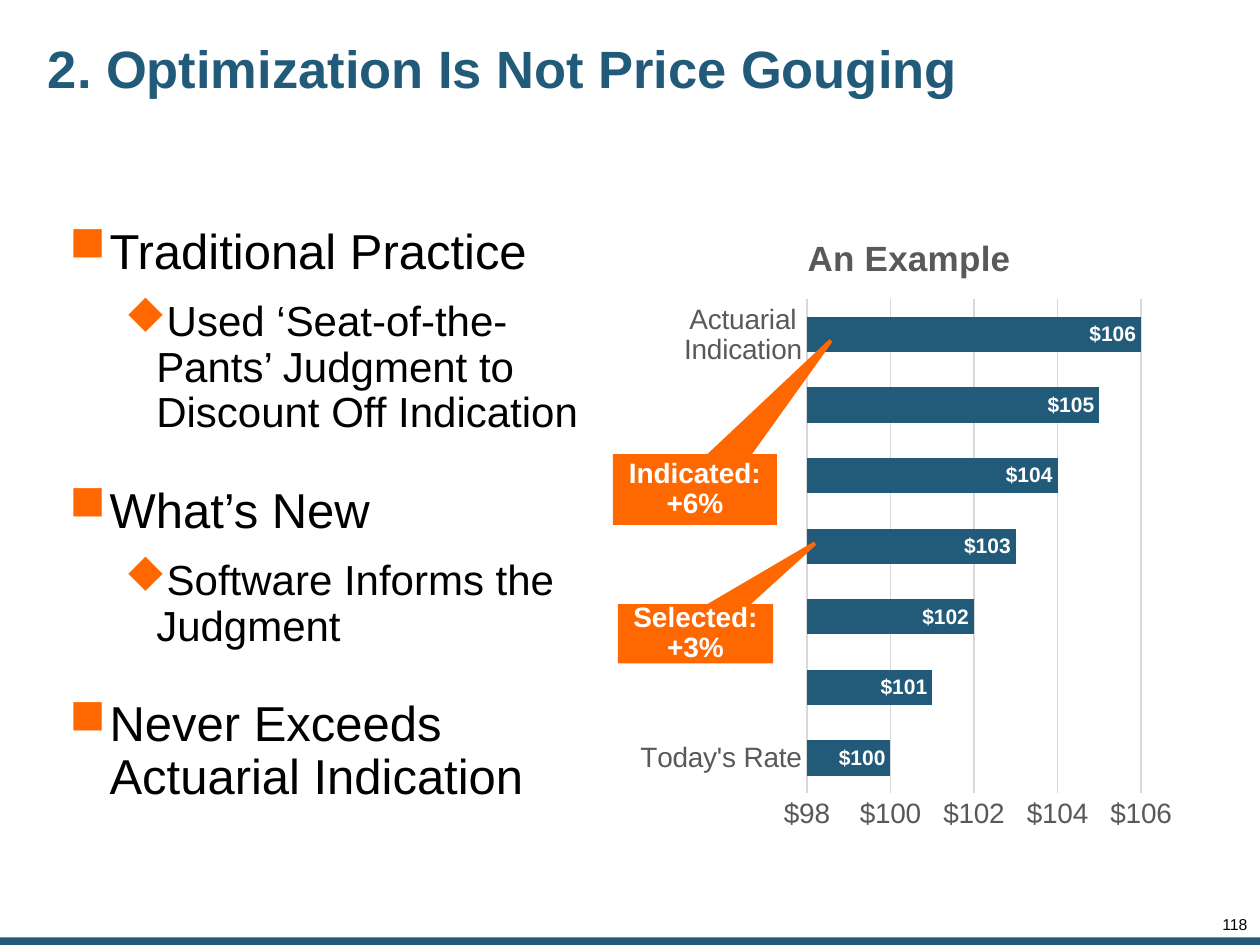
from lxml import etree
from pptx import Presentation
from pptx.chart.data import CategoryChartData
from pptx.dml.color import RGBColor
from pptx.enum.chart import XL_CHART_TYPE, XL_LABEL_POSITION, XL_TICK_MARK
from pptx.enum.shapes import MSO_SHAPE
from pptx.enum.text import MSO_ANCHOR, PP_ALIGN
from pptx.oxml import parse_xml
from pptx.oxml.ns import nsdecls, qn
from pptx.util import Inches, Pt

BLUE = RGBColor(0x22, 0x5A, 0x7A)
ORANGE = RGBColor(0xFF, 0x68, 0x01)
BLACK = RGBColor(0, 0, 0)
WHITE = RGBColor(0xFF, 0xFF, 0xFF)
GRAY = RGBColor(0x59, 0x59, 0x59)
LIGHT_GRAY = RGBColor(0xD9, 0xD9, 0xD9)
BAR_CLUSTERED = XL_CHART_TYPE.BAR_CLUSTERED
INSIDE_END = XL_LABEL_POSITION.INSIDE_END
NO_TICKS = XL_TICK_MARK.NONE
RECTANGLE = MSO_SHAPE.RECTANGLE
CALLOUT = MSO_SHAPE.RECTANGULAR_CALLOUT
TOP, MIDDLE = MSO_ANCHOR.TOP, MSO_ANCHOR.MIDDLE
LEFT, CENTER, RIGHT = PP_ALIGN.LEFT, PP_ALIGN.CENTER, PP_ALIGN.RIGHT
DOLLARS = '"$"#,##0'


def style_font(font, size, color, bold=False):
    font.name = "Arial"
    font.size = Pt(size)
    font.bold = bold
    font.color.rgb = color


def prepare_frame(frame, inset, anchor):
    frame.word_wrap = True
    frame.vertical_anchor = anchor
    frame.margin_left = frame.margin_right = Inches(inset)
    frame.margin_top = frame.margin_bottom = Inches(inset)


deck = Presentation()
deck.slide_width, deck.slide_height = Inches(10), Inches(7.5)
slide = deck.slides.add_slide(deck.slide_layouts[5])

footer_bar = slide.shapes.add_shape(
    RECTANGLE, Inches(0), Inches(7.44), Inches(10), Inches(0.06))
footer_bar.shadow.inherit = False
footer_bar.fill.solid()
footer_bar.fill.fore_color.rgb = BLUE
footer_bar.line.fill.background()

title = slide.shapes.title
title.left, title.top = Inches(0.33), Inches(0.1)
title.width, title.height = Inches(8.09), Inches(0.94)
title.text_frame.text = "2. Optimization Is Not Price Gouging"
prepare_frame(title.text_frame, 0.05, MIDDLE)
para = title.text_frame.paragraphs[0]
para.alignment = LEFT
para.line_spacing = 0.9
style_font(para.font, 30, BLUE, True)

# Bulleted points: level and text
points = [
    (0, "Traditional Practice"),
    (1, "Used ‘Seat-of-the-Pants’ Judgment to Discount Off Indication"),
    (0, "What’s New"),
    (1, "Software Informs the Judgment"),
    (0, "Never Exceeds Actuarial Indication"),
]
# Per level: bullet, text indent, hanging indent, size, space before
# In Wingdings, n is a square and u is a diamond
levels = [("n", 0.32, 0.32, 28, 28), ("u", 0.69, 0.25, 24, 12)]
body = slide.shapes.add_textbox(
    Inches(0.5), Inches(1.75), Inches(4.42), Inches(4.95))
frame = body.text_frame
prepare_frame(frame, 0.05, TOP)
for index, (level, text) in enumerate(points):
    bullet, indent, hanging, size, space = levels[level]
    para = frame.add_paragraph() if index else frame.paragraphs[0]
    para.text = text
    para.level = level
    para.line_spacing = 0.9
    para.space_before = Pt(space if index else 0)
    properties = para._p.get_or_add_pPr()
    properties.set("marL", str(Inches(indent)))
    properties.set("indent", str(-Inches(hanging)))
    bullet_color = etree.SubElement(properties, qn("a:buClr"))
    etree.SubElement(bullet_color, qn("a:srgbClr"), val=str(ORANGE))
    etree.SubElement(properties, qn("a:buFont"), typeface="Wingdings",
                     pitchFamily="2", charset="2")
    etree.SubElement(properties, qn("a:buChar"), char=bullet)
    style_font(para.font, size, BLACK)

chart_data = CategoryChartData(number_format=DOLLARS)
chart_data.categories = ["Today's Rate"] + [""] * 5 + ["Actuarial Indication"]
chart_data.add_series("Series 1", range(100, 107))
chart = slide.shapes.add_chart(
    BAR_CLUSTERED, Inches(4.99), Inches(1.67), Inches(4.42), Inches(5.03),
    chart_data).chart
style_font(chart.font, 16, GRAY)
chart.has_legend = False
chart.has_title = True
chart.chart_title.include_in_layout = False
chart.chart_title.text_frame.text = "An Example"
style_font(chart.chart_title.text_frame.paragraphs[0].font, 20, GRAY, True)

category_axis, value_axis = chart.category_axis, chart.value_axis
for axis in (category_axis, value_axis):
    axis.major_tick_mark = axis.minor_tick_mark = NO_TICKS
    style_font(axis.tick_labels.font, 16, GRAY)
category_axis.format.line.color.rgb = LIGHT_GRAY
category_axis.format.line.width = Pt(0.75)
value_axis.minimum_scale, value_axis.maximum_scale = 98, 106
value_axis.major_unit = 2
value_axis.format.line.fill.background()
value_axis.major_gridlines.format.line.color.rgb = LIGHT_GRAY
value_axis.major_gridlines.format.line.width = Pt(0.75)
value_axis.tick_labels.number_format = DOLLARS
value_axis.tick_labels.number_format_is_linked = False

plot = chart.plots[0]
plot.gap_width = 100
plot.vary_by_categories = False
bars = plot.series[0]
bars.format.fill.solid()
bars.format.fill.fore_color.rgb = BLUE
labels = bars.data_labels
labels.show_value = True
labels.position = INSIDE_END
labels.number_format = DOLLARS
labels.number_format_is_linked = False
style_font(labels.font, 12, WHITE, True)

# Fixed places for chart title and plot, as fractions of the chart
title_element = chart.chart_title._element
plot_element = chart._chartSpace.chart.plotArea
layouts = [
    (title_element, {"xMode": "edge", "yMode": "edge", "x": 0.31, "y": 0.03}),
    (plot_element, {"layoutTarget": "inner", "xMode": "edge", "yMode": "edge",
                    "x": 0.32, "y": 0.14, "w": 0.6, "h": 0.78}),
]
for element, settings in layouts:
    for old_layout in element.findall(qn("c:layout")):
        element.remove(old_layout)
    layout = parse_xml(f"<c:layout {nsdecls('c')}><c:manualLayout/></c:layout>")
    for name, value in settings.items():
        etree.SubElement(layout[0], qn(f"c:{name}"), val=str(value))
    element.insert(1 if element is title_element else 0, layout)

page_number = slide.shapes.add_textbox(
    Inches(9.41), Inches(7.28), Inches(0.49), Inches(0.13))
prepare_frame(page_number.text_frame, 0, TOP)
para = page_number.text_frame.paragraphs[0]
para.text = "118"
para.alignment = RIGHT
para.line_spacing = 0.85
style_font(para.font, 9, BLACK)

# Callouts: text, left, top, width, height, pointer tip
callouts = [
    ("Selected: +3%", 4.92, 4.81, 1.2, 0.44, (0.79, -1.63)),
    ("Indicated: +6%", 4.88, 3.62, 1.27, 0.53, (0.85, -2.23)),
]
for text, left, top, width, height, tip in callouts:
    callout = slide.shapes.add_shape(
        CALLOUT, Inches(left), Inches(top), Inches(width), Inches(height))
    callout.shadow.inherit = False
    callout.adjustments[0], callout.adjustments[1] = tip
    callout.fill.solid()
    callout.fill.fore_color.rgb = ORANGE
    callout.line.color.rgb = ORANGE
    callout.line.width = Pt(2.25)
    outline = callout.line._get_or_add_ln()
    etree.SubElement(outline, qn("a:miter"), lim="800000")
    prepare_frame(callout.text_frame, 0.1, MIDDLE)
    para = callout.text_frame.paragraphs[0]
    para.text = text
    para.alignment = CENTER
    para.line_spacing = 0.9
    style_font(para.font, 16, WHITE, True)

deck.save("out.pptx")
